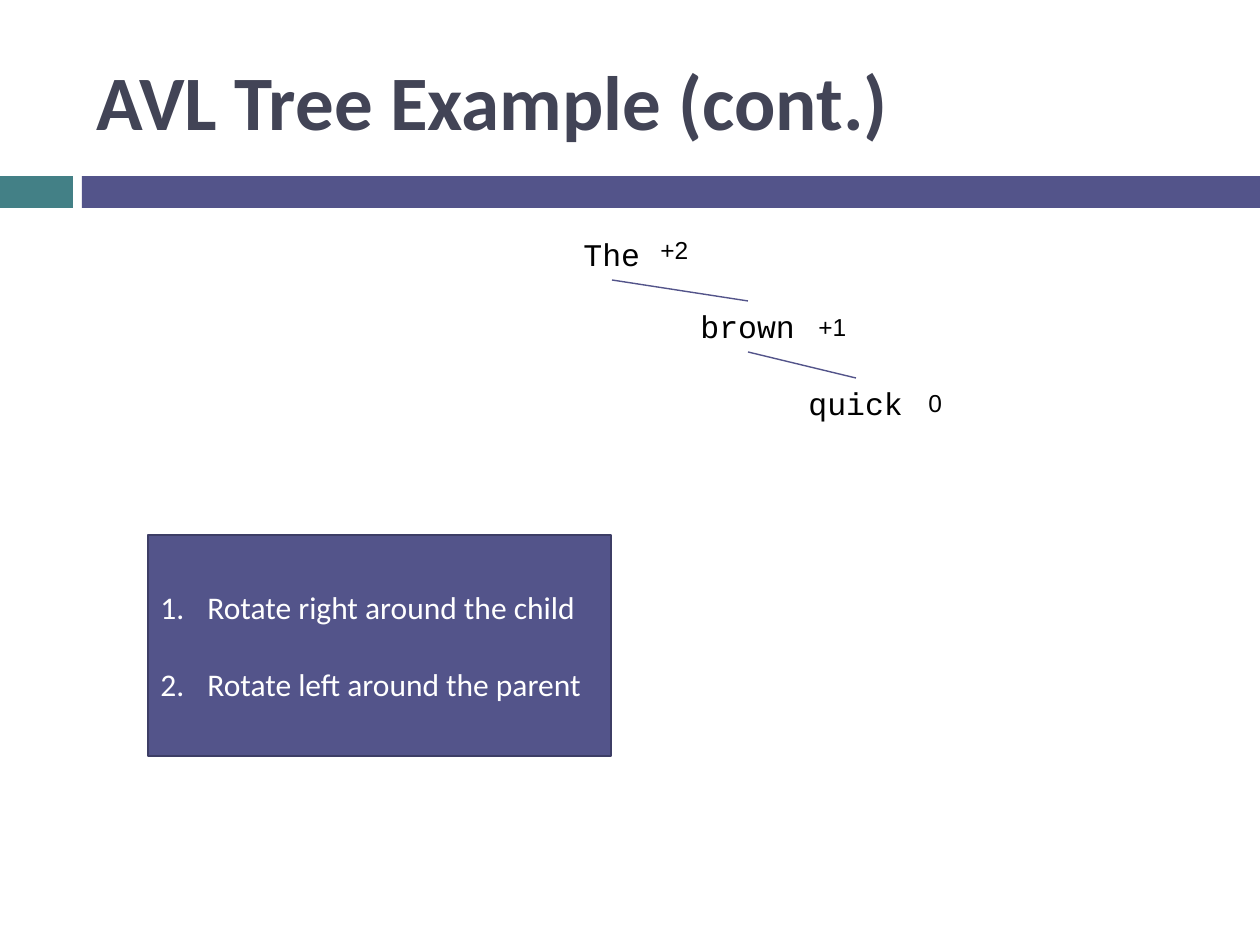
from dataclasses import dataclass

from lxml.etree import SubElement
from pptx import Presentation
from pptx.dml.color import RGBColor
from pptx.enum.shapes import MSO_CONNECTOR as Connector, MSO_SHAPE as Shape
from pptx.enum.text import MSO_ANCHOR as Anchor, PP_ALIGN as Align
from pptx.oxml.ns import qn
from pptx.util import Pt

# Content: places are left, top, width, height in px
TITLE = "AVL Tree Example (cont.)"
# word, its place, balance factor, place of the balance
NODES = [
    ("The", (571, 229, 82, 51), "+2", (648, 229, 54, 43)),
    ("brown", (688, 301, 120, 51), "+1", (806, 306, 54, 43)),
    ("quick", (796, 378, 120, 51), "0", (916, 382, 39, 43)),
]
STEPS = ["Rotate right around the child", "Rotate left around the parent"]

SLIDE = (1260, 945)
TITLE_PLACE = (84, 32, 1124, 136)
ACCENT_PLACE = (0, 176, 73, 32)
BAND_PLACE = (82, 176, 1178, 32)
STEPS_PLACE = (148, 535, 463, 221)
NUMBER_INDENT = 47


@dataclass(frozen=True)
class Theme:
    teal: str = "438086"
    indigo: str = "53548A"
    outline: str = "3D3E66"
    heading: str = "424456"
    ink: str = "000000"
    light: str = "FFFFFF"
    title_size: int = 44
    body_size: int = 18
    balance_size: int = 14
    edge_width: float = 0.79
    box_width: float = 1.5


THEME = Theme()


def px(length):
    return round(length * 914400 / 126)


def color(value):
    return RGBColor.from_string(value)


def write(frame, lines, *, font, size, ink, bold=False, anchor=Anchor.TOP,
          wrap=True, numbered=False, gap=0):
    frame.word_wrap = wrap
    frame.vertical_anchor = anchor
    for index, line in enumerate(lines):
        paragraph = frame.paragraphs[0] if index == 0 else frame.add_paragraph()
        paragraph.alignment = Align.LEFT
        if index:
            paragraph.space_before = Pt(gap)
        run = paragraph.add_run()
        run.text = line
        run.font.name = font
        run.font.size = Pt(size)
        run.font.bold = bold
        run.font.color.rgb = color(ink)
        if numbered:
            properties = paragraph._p.get_or_add_pPr()
            properties.set("marL", str(px(NUMBER_INDENT)))
            properties.set("indent", str(-px(NUMBER_INDENT)))
            SubElement(properties, qn("a:buFont"), typeface="+mj-lt")
            SubElement(properties, qn("a:buAutoNum"), type="arabicPeriod")


def add_label(slide, text, place, **style):
    label = slide.shapes.add_textbox(*map(px, place))
    write(label.text_frame, [text], **style)


def add_box(slide, place, fill, outline=None):
    box = slide.shapes.add_shape(Shape.RECTANGLE, *map(px, place))
    box.shadow.inherit = False
    box.fill.solid()
    box.fill.fore_color.rgb = color(fill)
    if outline:
        box.line.color.rgb = color(outline)
        box.line.width = Pt(THEME.box_width)
    else:
        box.line.fill.background()
    return box


def add_edge(slide, parent, child):
    """Join the bottom centre of the parent to the top centre of the child."""
    start = (parent[0] + parent[2] / 2, parent[1] + parent[3])
    end = (child[0] + child[2] / 2, child[1])
    edge = slide.shapes.add_connector(Connector.STRAIGHT, *map(px, start + end))
    edge.line.color.rgb = color(THEME.indigo)
    edge.line.width = Pt(THEME.edge_width)
    SubElement(edge._element.spPr, qn("a:effectLst"))


def main():
    deck = Presentation()
    deck.slide_width, deck.slide_height = map(px, SLIDE)
    slide = deck.slides.add_slide(deck.slide_layouts[6])

    # Heading and its band
    add_box(slide, ACCENT_PLACE, THEME.teal)
    add_box(slide, BAND_PLACE, THEME.indigo)
    add_label(slide, TITLE, TITLE_PLACE, font="Calibri", size=THEME.title_size,
              ink=THEME.heading, bold=True, anchor=Anchor.MIDDLE)

    # Tree
    for word, place, balance, balance_place in NODES:
        add_label(slide, word, place, font="Courier New",
                  size=THEME.body_size, ink=THEME.ink, wrap=False)
        add_label(slide, balance, balance_place, font="Arial",
                  size=THEME.balance_size, ink=THEME.ink, wrap=False)
    for parent, child in zip(NODES, NODES[1:]):
        add_edge(slide, parent[1], child[1])

    # Rotation steps
    steps_box = add_box(slide, STEPS_PLACE, THEME.indigo, THEME.outline)
    write(steps_box.text_frame, STEPS, font="Calibri", size=THEME.body_size,
          ink=THEME.light, anchor=Anchor.MIDDLE, numbered=True, gap=22)

    deck.save("out.pptx")


if __name__ == "__main__":
    main()
